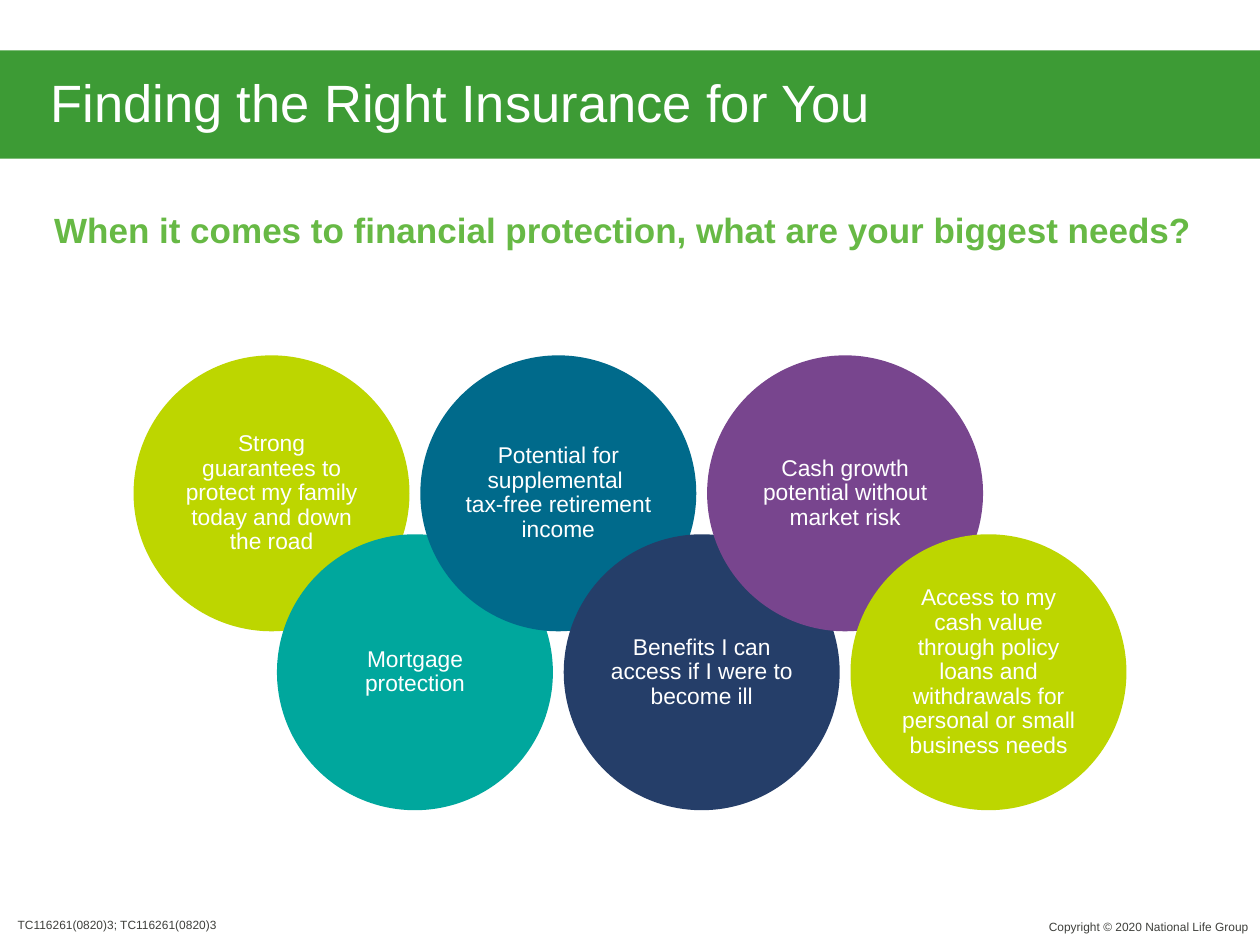
from dataclasses import dataclass

from pptx import Presentation
from pptx.dml.color import RGBColor
from pptx.enum.shapes import MSO_SHAPE as Shape
from pptx.enum.text import MSO_ANCHOR as Anchor, MSO_AUTO_SIZE as AutoSize, PP_ALIGN as Align
from pptx.util import Inches, Pt

WHITE = RGBColor(0xFF, 0xFF, 0xFF)
BANNER_GREEN = RGBColor(0x3D, 0x9B, 0x35)
HEADING_GREEN = RGBColor(0x67, 0xB9, 0x45)
FOOTER_GRAY = RGBColor(0x3F, 0x40, 0x3C)
LIME = RGBColor(0xBD, 0xD6, 0x00)
TEAL = RGBColor(0x00, 0xA7, 0x9D)
BLUE = RGBColor(0x00, 0x6A, 0x8B)
NAVY = RGBColor(0x25, 0x3E, 0x69)
PURPLE = RGBColor(0x78, 0x45, 0x8E)

# Circles alternate between two rows, each a fixed step to the right
DIAMETER = 2.19
FIRST_LEFT = 1.06
STEP = 1.138
ROW_TOPS = (2.82, 4.24)


@dataclass
class Need:
    text: str
    color: RGBColor
    inset: float = 0.05


@dataclass
class Label:
    text: str
    left: float
    top: float
    width: float
    height: float
    size: float
    color: RGBColor
    bold: bool = False
    align: Align = Align.LEFT
    anchor: Anchor = Anchor.MIDDLE


NEEDS = [
    Need("Strong guarantees to protect my family today and down the road", LIME),
    Need("Mortgage protection", TEAL),
    Need("Potential for supplemental \vtax-free retirement income", BLUE, inset=0),
    Need("Benefits I can access if I were to become ill", NAVY),
    Need("Cash growth potential without market risk", PURPLE),
    Need("Access to my cash value through policy loans and withdrawals "
         "for personal or small business needs", LIME),
]

LABELS = [
    Label("Copyright © 2020 National Life Group", 7.66, 7.3, 2.25, 0.11, 6.8,
          FOOTER_GRAY, align=Align.RIGHT),
    Label("TC116261(0820)3; TC116261(0820)3", 0.14, 7.28, 2.57, 0.11, 6.8,
          FOOTER_GRAY, anchor=Anchor.TOP),
    Label("When it comes to financial protection, what are your biggest needs?",
          0.43, 1.65, 9.3, 0.35, 20, HEADING_GREEN, bold=True),
]


def write_text(shape, text: str, size: float, color: RGBColor, align: Align,
               anchor: Anchor, inset_x: float = 0, inset_y: float = 0,
               bold: bool = False, line_spacing: float = 1.0) -> None:
    frame = shape.text_frame
    frame.text = text
    frame.word_wrap = True
    frame.auto_size = AutoSize.NONE
    frame.vertical_anchor = anchor
    frame.margin_left = frame.margin_right = Inches(inset_x)
    frame.margin_top = frame.margin_bottom = Inches(inset_y)
    paragraph = frame.paragraphs[0]
    paragraph.alignment = align
    paragraph.line_spacing = line_spacing
    font = paragraph.font
    font.name = "Arial"
    font.size = Pt(size)
    font.bold = bold
    font.color.rgb = color


def add_label(slide, label: Label) -> None:
    box = slide.shapes.add_textbox(Inches(label.left), Inches(label.top),
                                   Inches(label.width), Inches(label.height))
    write_text(box, label.text, label.size, label.color, label.align,
               label.anchor, bold=label.bold)


def add_need(slide, need: Need, index: int) -> None:
    circle = slide.shapes.add_shape(
        Shape.OVAL, Inches(FIRST_LEFT + index * STEP), Inches(ROW_TOPS[index % 2]),
        Inches(DIAMETER), Inches(DIAMETER))
    circle.shadow.inherit = False
    circle.fill.solid()
    circle.fill.fore_color.rgb = need.color
    circle.line.fill.background()
    write_text(circle, need.text, 13, WHITE, Align.CENTER, Anchor.MIDDLE,
               need.inset, need.inset, line_spacing=0.9)


def main() -> None:
    presentation = Presentation()
    presentation.slide_width = Inches(10)
    presentation.slide_height = Inches(7.5)
    slide = presentation.slides.add_slide(presentation.slide_layouts[5])

    # Title banner
    title = slide.shapes.title
    title.left, title.top = Inches(0), Inches(0.4)
    title.width, title.height = Inches(10), Inches(0.86)
    title.fill.solid()
    title.fill.fore_color.rgb = BANNER_GREEN
    write_text(title, "Finding the Right Insurance for You", 30, WHITE,
               Align.LEFT, Anchor.BOTTOM, 0.4, 0.2, line_spacing=0.9)

    # Footers and question
    for label in LABELS:
        add_label(slide, label)

    # Overlapping circles of needs
    for index, need in enumerate(NEEDS):
        add_need(slide, need, index)

    presentation.save("out.pptx")


if __name__ == "__main__":
    main()
